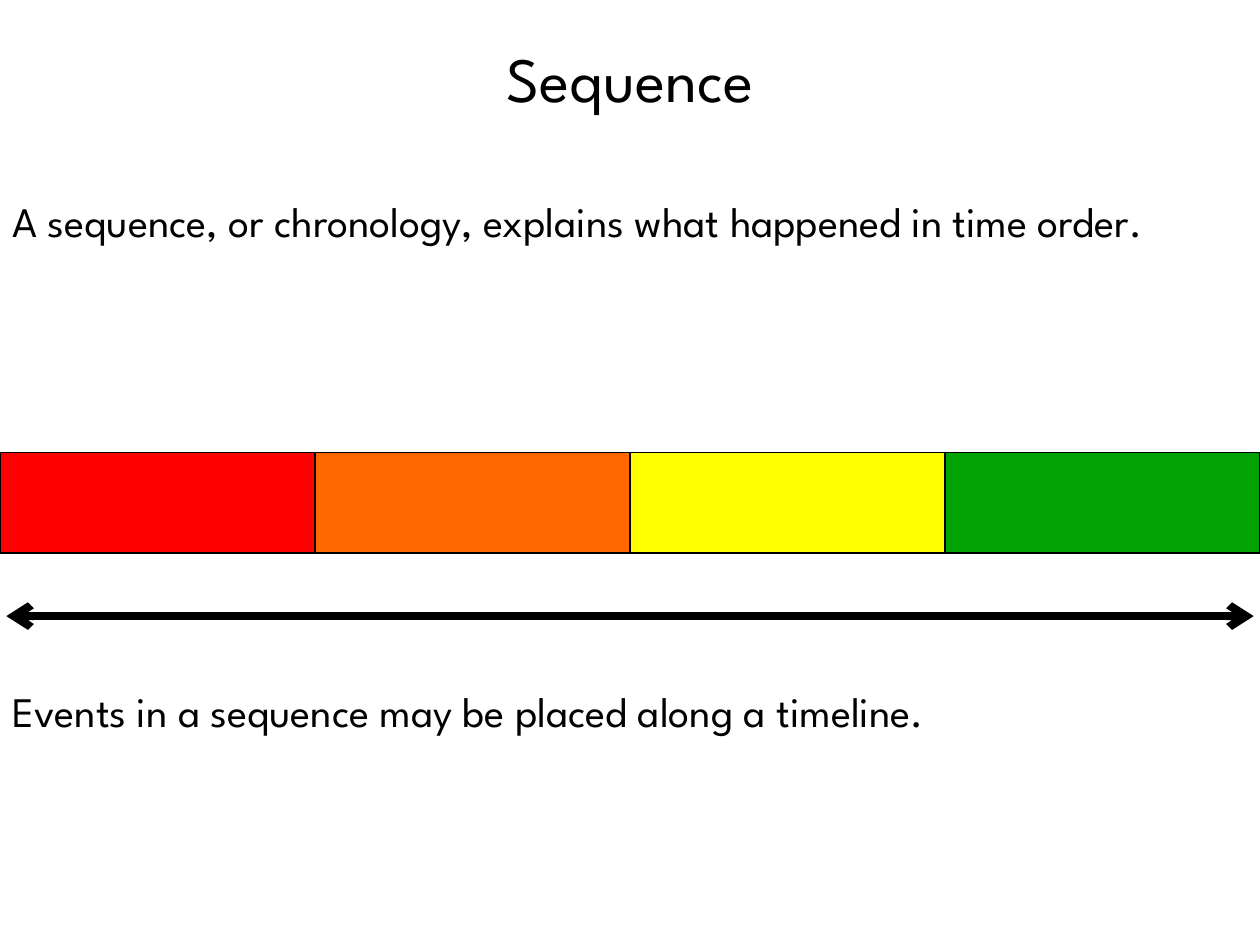
from lxml import etree
from pptx import Presentation
from pptx.dml.color import RGBColor
from pptx.enum.shapes import MSO_CONNECTOR, MSO_SHAPE
from pptx.enum.text import MSO_ANCHOR, MSO_AUTO_SIZE, PP_ALIGN
from pptx.oxml.ns import qn
from pptx.util import Inches, Pt

RECTANGLE, STRAIGHT = MSO_SHAPE.RECTANGLE, MSO_CONNECTOR.STRAIGHT
TOP, NO_FIT = MSO_ANCHOR.TOP, MSO_AUTO_SIZE.NONE
LEFT, CENTER, JUSTIFY = PP_ALIGN.LEFT, PP_ALIGN.CENTER, PP_ALIGN.JUSTIFY
BLACK = RGBColor(0x00, 0x00, 0x00)
RED = RGBColor(0xFF, 0x00, 0x00)
ORANGE = RGBColor(0xFF, 0x66, 0x00)
YELLOW = RGBColor(0xFF, 0xFF, 0x00)
GREEN = RGBColor(0x00, 0xA3, 0x01)
FONT = "League Spartan"
WIDTH, HEIGHT = 10, 7.5

TITLE = "Sequence"
NOTES = [
    ("A sequence, or chronology, explains what happened in time order.", 1.3, 1.28, JUSTIFY),
    ("Events in a sequence may be placed along a timeline.", 5.19, 0.67, LEFT),
]
STAGES = [RED, ORANGE, YELLOW, GREEN]
BAND_TOP, BAND_HEIGHT = 3.59, 0.8
ARROW_Y, ARROW_MARGIN = 4.89, 0.05


def write(sp, text, size, align, spacing):
    tf = sp.text_frame
    for name, value in {"word_wrap": True, "auto_size": NO_FIT, "vertical_anchor": TOP}.items():
        setattr(tf, name, value)
    p = tf.paragraphs[0]
    p.alignment, p.line_spacing = align, spacing
    r = p.add_run()
    r.text = text
    for name, value in {"name": FONT, "size": Pt(size)}.items():
        setattr(r.font, name, value)
    r.font.color.rgb = BLACK


def main():
    prs = Presentation()
    prs.slide_width, prs.slide_height = Inches(WIDTH), Inches(HEIGHT)
    s = prs.slides.add_slide(prs.slide_layouts[5])

    title = s.shapes.title
    box = {"left": 0, "top": 0.26, "width": WIDTH, "height": 0.71}
    for name, value in box.items():
        setattr(title, name, Inches(value))
    write(title, TITLE, 36, CENTER, 1.0)

    for text, top, height, align in NOTES:
        sp = s.shapes.add_textbox(0, Inches(top), Inches(WIDTH), Inches(height))
        write(sp, text, 24, align, 1.5)

    stage_width = WIDTH / len(STAGES)
    for i, color in enumerate(STAGES):
        sp = s.shapes.add_shape(RECTANGLE, Inches(i * stage_width), Inches(BAND_TOP),
                                Inches(stage_width), Inches(BAND_HEIGHT))
        sp.shadow.inherit = False
        sp.fill.solid()
        sp.fill.fore_color.rgb = color
        sp.line.color.rgb = BLACK
        sp.line.width = Pt(0.75)

    arrow = s.shapes.add_connector(STRAIGHT, Inches(ARROW_MARGIN), Inches(ARROW_Y),
                                   Inches(WIDTH - ARROW_MARGIN), Inches(ARROW_Y))
    arrow.line.color.rgb = BLACK
    arrow.line.width = Pt(4.5)
    ln = arrow.line._get_or_add_ln()
    for end in ("a:headEnd", "a:tailEnd"):
        etree.SubElement(ln, qn(end), type="arrow")
    etree.SubElement(arrow._element.spPr, qn("a:effectLst"))

    prs.save("out.pptx")


if __name__ == "__main__":
    main()
